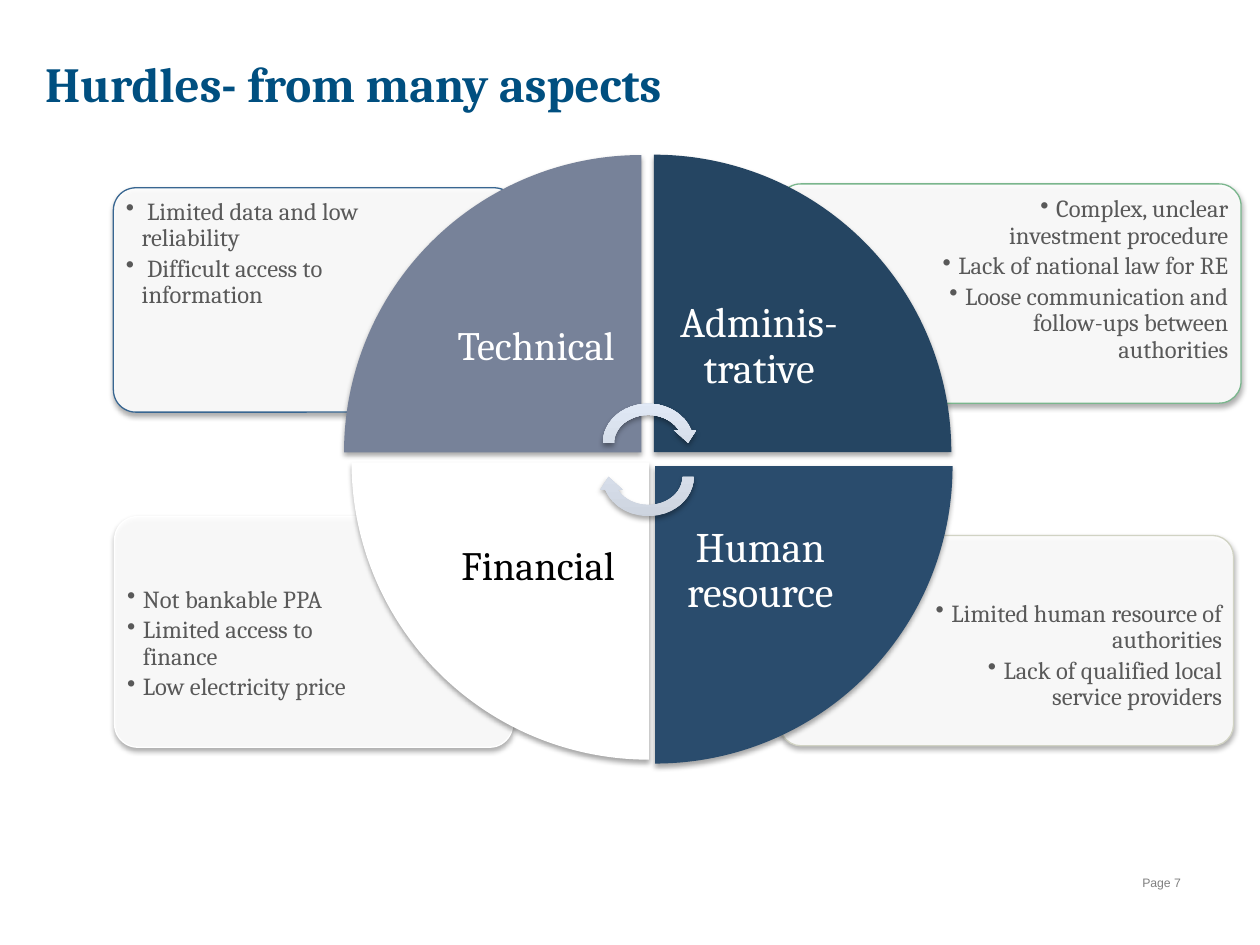
from lxml import etree
from pptx import Presentation
from pptx.dml.color import RGBColor
from pptx.enum import shapes, text
from pptx.oxml import ns
from pptx.util import Pt

FONT = "Cambria"
BLACK = RGBColor(0x00, 0x00, 0x00)
WHITE = RGBColor(0xFF, 0xFF, 0xFF)
TITLE_BLUE = RGBColor(0x00, 0x4F, 0x80)
BODY_GRAY = RGBColor(0x59, 0x59, 0x59)
PAGE_GRAY = RGBColor(0x80, 0x80, 0x80)
SLATE = RGBColor(0x77, 0x82, 0x99)
NAVY = RGBColor(0x25, 0x45, 0x62)
STEEL = RGBColor(0x2A, 0x4C, 0x6D)
BLUE_LINE = RGBColor(0x38, 0x66, 0x91)
GREEN_LINE = RGBColor(0x7A, 0xB6, 0x8D)
SAND_LINE = RGBColor(0xD1, 0xD3, 0xC4)
ARROW_DARK = RGBColor(0xCC, 0xD3, 0xDE)
ARROW_LIGHT = RGBColor(0xE1, 0xE9, 0xF6)

LEFT, CENTER, RIGHT = text.PP_ALIGN.LEFT, text.PP_ALIGN.CENTER, text.PP_ALIGN.RIGHT
WEDGE = 169.9
LABEL = 120.2

# Card rectangle, line colour, text rectangle, alignment, bullets
CARDS = [
    ((445.7, 306, 259.2, 120.2), SAND_LINE, (526.3, 339.1, 176.4, 85), RIGHT,
     ["Limited human resource of authorities",
      "Lack of qualified local service providers"]),
    ((65.5, 295.2, 227.5, 131.8), WHITE, (68.4, 331.2, 153.4, 92.9), LEFT,
     ["Not bankable PPA", "Limited access to finance", "Low electricity price"]),
    ((445, 105.1, 264.2, 125.3), GREEN_LINE, (527, 108, 179.3, 88.6), RIGHT,
     ["Complex, unclear investment procedure", "Lack of national law for RE",
      "Loose communication and follow-ups between authorities"]),
    ((64.8, 107.3, 230.4, 128.2), BLUE_LINE, (67.7, 109.4, 155.5, 90), LEFT,
     [" Limited data and low reliability", " Difficult access to information"]),
]

# Label, left, top, rotation, fill, text colour, text size, alignment
WEDGES = [
    ("Technical", 196.6, 88.6, 0, SLATE, WHITE, 23, CENTER),
    ("Adminis-trative", 373.7, 88.4, 90, NAVY, WHITE, 24, CENTER),
    ("Human resource", 374.4, 266.4, 180, STEEL, WHITE, 24, CENTER),
    ("Financial", 200.9, 264.2, 270, WHITE, BLACK, 23, LEFT),
]


def add_child(parent, tag, **attributes):
    return etree.SubElement(parent, ns.qn(tag), attributes)


def add_shadow(shape):
    shape.shadow.inherit = False
    effects = shape._element.spPr.find(ns.qn("a:effectLst"))
    shadow = add_child(effects, "a:outerShdw", blurRad=str(Pt(3.1)),
                       dist=str(Pt(1.8)), dir="5400000", rotWithShape="0")
    color = add_child(shadow, "a:srgbClr", val=str(BLACK))
    add_child(color, "a:alpha", val="35000")


def add_shape(page, kind, rect, rotation=0):
    shape = page.shapes.add_shape(kind, *map(Pt, rect))
    shape.rotation = rotation
    shape.line.fill.background()
    add_shadow(shape)
    return shape


def add_text(page, rect, lines, size, color, align=LEFT, inset=None, font=FONT,
             bold=False, spacing=0.9, after=0, bullets=False, middle=False):
    box = page.shapes.add_textbox(*map(Pt, rect))
    frame = box.text_frame
    frame.word_wrap = True
    if middle:
        frame.vertical_anchor = text.MSO_ANCHOR.MIDDLE
    if inset is not None:
        frame.margin_left = frame.margin_right = Pt(inset)
        frame.margin_top = frame.margin_bottom = Pt(inset)
    for index, line in enumerate(lines):
        para = frame.add_paragraph() if index else frame.paragraphs[0]
        para.alignment = align
        para.line_spacing = spacing
        para.space_after = Pt(after)
        if bullets:
            properties = para._p.get_or_add_pPr()
            properties.set("marL", str(Pt(9)))
            properties.set("indent", str(Pt(-9)))
            add_child(properties, "a:buChar", char="•")
        span = para.add_run()
        span.text = line
        span.font.name = font
        span.font.size = Pt(size)
        span.font.bold = bold
        span.font.color.rgb = color


def add_card(page, rect, line_color, text_rect, align, lines):
    card = add_shape(page, shapes.MSO_SHAPE.ROUNDED_RECTANGLE, rect)
    card.adjustments[0] = 0.1
    card.fill.solid()
    card.fill.fore_color.rgb = WHITE
    fill_color = card._element.spPr.find(ns.qn("a:solidFill"))[0]
    add_child(fill_color, "a:alpha", val="90000")
    card.line.color.rgb = line_color
    card.line.width = Pt(0.75)
    add_text(page, text_rect, lines, 14, BODY_GRAY, align, inset=4.3,
             after=2.3, bullets=True)


def add_wedge(page, label, left, top, rotation, fill, color, size, align):
    wedge = add_shape(page, shapes.MSO_SHAPE.PIE_WEDGE,
                      (left, top, WEDGE, WEDGE), rotation)
    wedge.fill.solid()
    wedge.fill.fore_color.rgb = fill
    # The label sits in the corner nearest the centre of the circle
    shift = WEDGE - LABEL
    x = left + (shift if rotation in (0, 270) else 0)
    y = top + (shift if rotation in (0, 90) else 0)
    add_text(page, (x, y, LABEL, LABEL), [label], size, color, align,
             inset=13, middle=True)


def add_cycle_arrow(page, top, rotation):
    arrow = add_shape(page, shapes.MSO_SHAPE.CIRCULAR_ARROW,
                      (341.3, top, 58.3, 51.1), rotation)
    arrow.fill.gradient()
    arrow.fill.gradient_angle = 90
    for stop, color in zip(arrow.fill.gradient_stops, (ARROW_DARK, ARROW_LIGHT)):
        stop.color.rgb = color
    arrow._element.spPr.find(ns.qn("a:gradFill")).set("rotWithShape", "0")


def main():
    deck = Presentation()
    deck.slide_width, deck.slide_height = Pt(720), Pt(540)
    page = deck.slides.add_slide(deck.slide_layouts[6])

    # Page number and title
    add_text(page, (405.4, 496.8, 276.5, 28.8), ["Page 7"], 7, PAGE_GRAY, RIGHT,
             font="Arial", spacing=1.0)
    add_text(page, (18.7, 25.9, 683.3, 45.4), ["Hurdles- from many aspects"], 28,
             TITLE_BLUE, bold=True, spacing=Pt(35))

    # Cards behind the circle
    for card in CARDS:
        add_card(page, *card)

    # Quarters of the circle
    for wedge in WEDGES:
        add_wedge(page, *wedge)

    # Arrows at the centre
    for top, rotation in ((227.5, 0), (247, 180)):
        add_cycle_arrow(page, top, rotation)

    deck.save("out.pptx")


if __name__ == "__main__":
    main()
